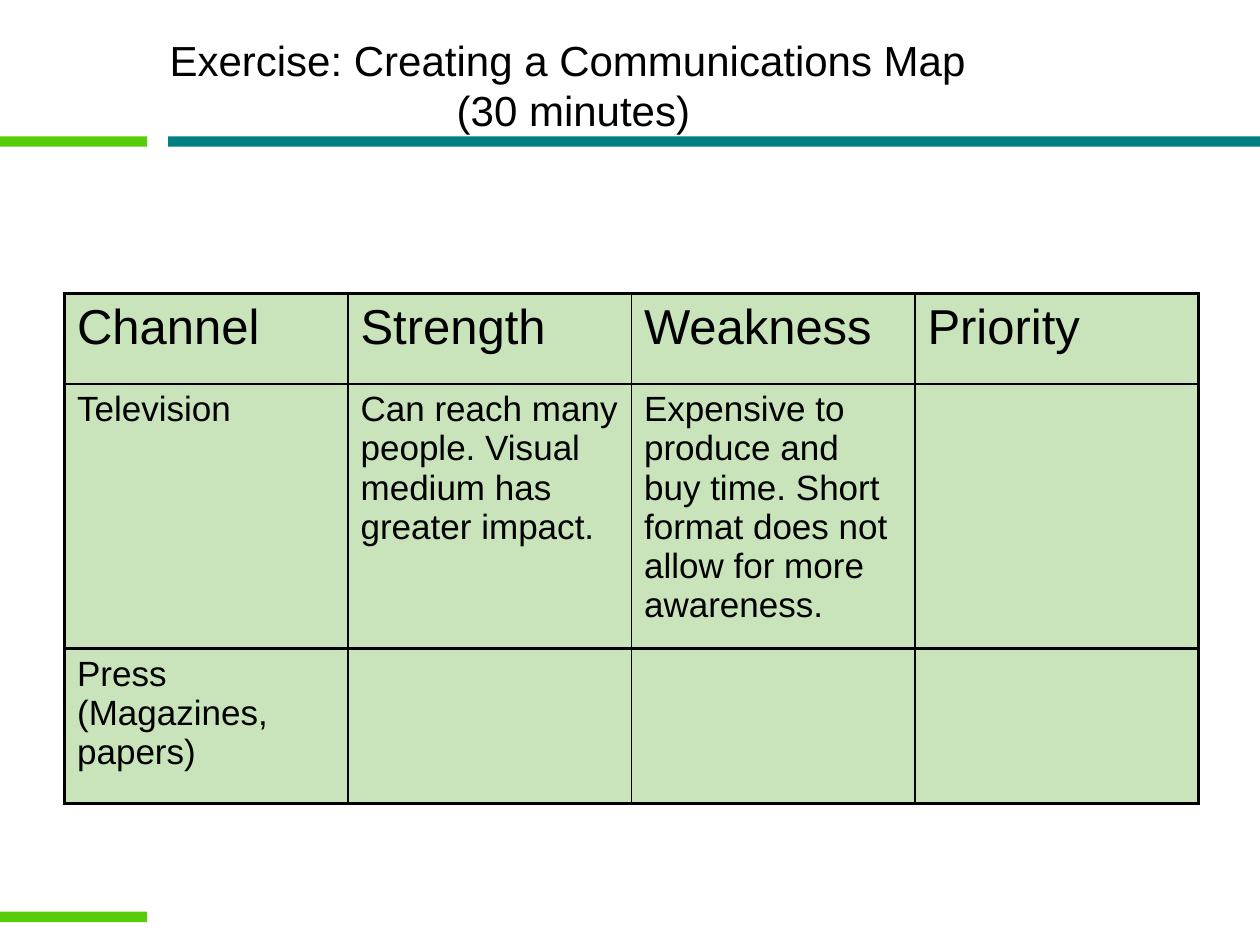
"""Build the communications map exercise slide."""
from dataclasses import dataclass

from lxml import etree
from pptx import Presentation
from pptx import util as u
from pptx.dml.color import RGBColor
from pptx.enum import shapes, text
from pptx.oxml.ns import qn

FONT = "Arial"
BLACK, TEAL, LIME, PALE_GREEN = "000000", "008080", "56CC0B", "C9E4BA"
THIN, THICK = 1, 2.25
BAR_HEIGHT = 0.21


@dataclass(frozen=True)
class Bar:
    left: float
    top: float
    width: float
    color: str


@dataclass(frozen=True)
class Row:
    height: float
    size: int
    top_line: float
    bottom_line: float
    entries: tuple[str, ...]


BARS = (
    Bar(3.39, 2.75, 22.01, TEAL),
    Bar(0, 2.75, 2.97, LIME),
    Bar(0, 18.38, 2.97, LIME),
)
ROWS = (
    Row(1.82, 28, THICK, THIN, ("Channel", "Strength", "Weakness", "Priority")),
    Row(4.55, 20, THIN, THICK, (
        "Television",
        "Can reach many people. Visual medium has greater impact.",
        "Expensive to produce and buy time. Short format does not allow for more awareness.",
        "",
    )),
    Row(3.12, 20, THICK, THICK, ("Press (Magazines, papers)", "", "", "")),
)


def rgb(color: str) -> RGBColor:
    return RGBColor.from_string(color)


def style(paragraph, size: int) -> None:
    paragraph.font.name = FONT
    paragraph.font.size = u.Pt(size)
    paragraph.font.color.rgb = rgb(BLACK)


def draw_bar(slide, bar: Bar) -> None:
    stripe = slide.shapes.add_shape(
        shapes.MSO_SHAPE.RECTANGLE,
        u.Cm(bar.left), u.Cm(bar.top), u.Cm(bar.width), u.Cm(BAR_HEIGHT),
    )
    stripe.shadow.inherit = False
    stripe.fill.solid()
    stripe.fill.fore_color.rgb = rgb(bar.color)
    stripe.line.fill.background()


def draw_title(slide, wording: str) -> None:
    title = slide.shapes.add_textbox(u.Cm(1.78), u.Cm(0.79), u.Cm(19.56), u.Cm(1.83))
    frame = title.text_frame
    frame.word_wrap = True
    frame.vertical_anchor = text.MSO_ANCHOR.MIDDLE
    heading = frame.paragraphs[0]
    heading.text = wording
    heading.alignment = text.PP_ALIGN.CENTER
    style(heading, 24)


def add_border(cell, side: str, points: float) -> None:
    properties = cell._tc.get_or_add_tcPr()
    border = etree.SubElement(properties, qn(f"a:ln{side}"), w=str(u.Pt(points)))
    fill = etree.SubElement(border, qn("a:solidFill"))
    etree.SubElement(fill, qn("a:srgbClr"), val=BLACK)


def draw_channel_table(slide, rows: tuple[Row, ...]) -> None:
    count = len(rows[0].entries)
    table = slide.shapes.add_table(
        len(rows), count, u.Cm(1.3), u.Cm(5.92), u.Cm(22.86),
        u.Cm(sum(row.height for row in rows)),
    ).table
    table.first_row = table.horz_banding = False
    for r, row in enumerate(rows):
        table.rows[r].height = u.Cm(row.height)
        for c, entry in enumerate(row.entries):
            cell = table.cell(r, c)
            add_border(cell, "L", THICK if c == 0 else THIN)
            add_border(cell, "R", THICK if c == count - 1 else THIN)
            add_border(cell, "T", row.top_line)
            add_border(cell, "B", row.bottom_line)
            cell.fill.solid()
            cell.fill.fore_color.rgb = rgb(PALE_GREEN)
            cell.text = entry
            style(cell.text_frame.paragraphs[0], row.size)


def main() -> None:
    deck = Presentation()
    deck.slide_width, deck.slide_height = u.Cm(25.4), u.Cm(19.05)
    slide = deck.slides.add_slide(deck.slide_layouts[6])
    for bar in BARS:
        draw_bar(slide, bar)
    draw_title(slide, "Exercise: Creating a Communications Map \v(30 minutes)")
    draw_channel_table(slide, ROWS)
    deck.save("out.pptx")


if __name__ == "__main__":
    main()
